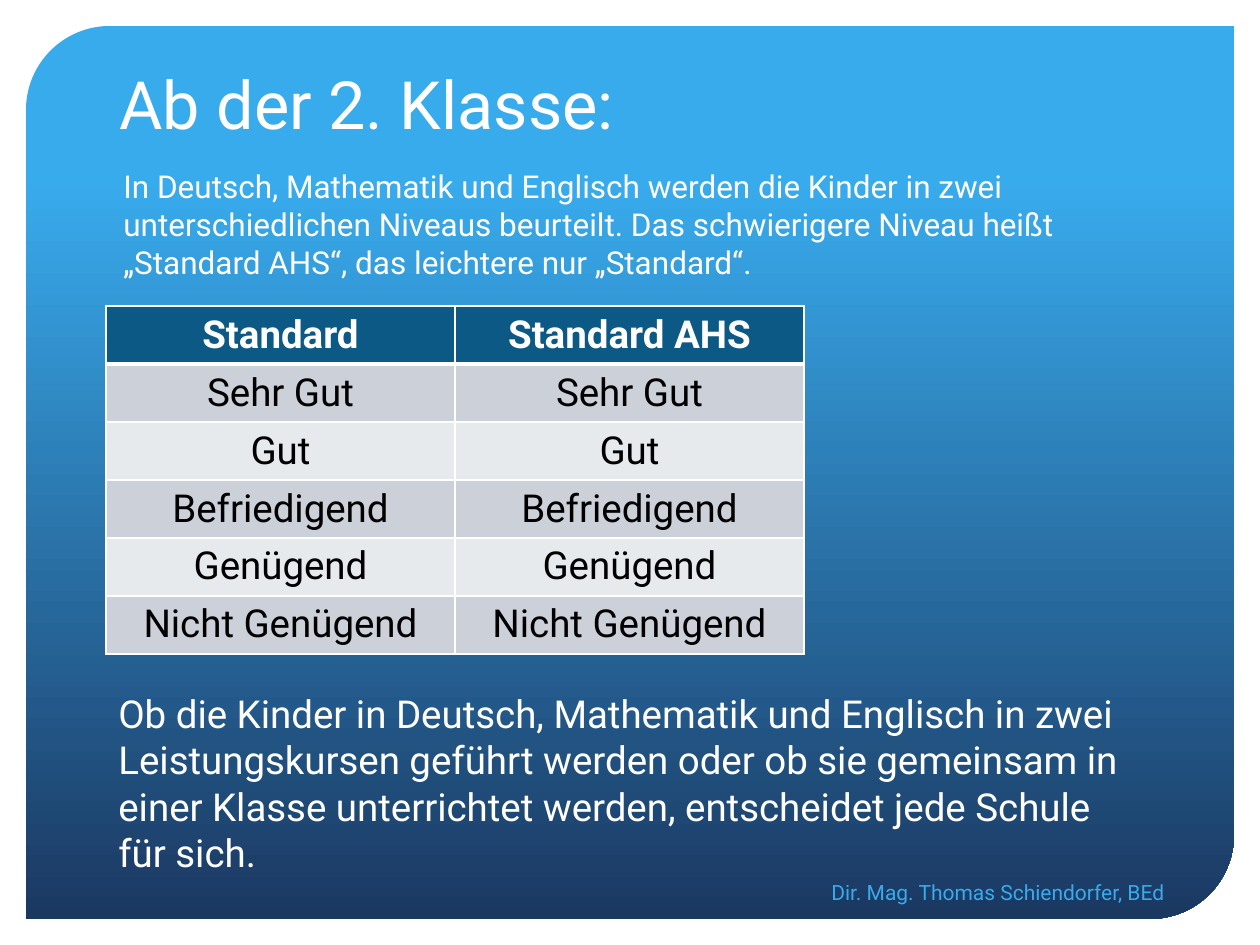
from dataclasses import dataclass

import pptx
import pptx.dml.color
import pptx.enum.shapes
import pptx.enum.text
import pptx.oxml
import pptx.oxml.ns
import pptx.util
from lxml import etree

RGBColor = pptx.dml.color.RGBColor
Anchor = pptx.enum.text.MSO_ANCHOR
Align = pptx.enum.text.PP_ALIGN

PIXELS_PER_INCH = 126
FONT = "Roboto"
WHITE = RGBColor(0xFF, 0xFF, 0xFF)
BLACK = RGBColor(0, 0, 0)
SKY = RGBColor(0x38, 0xAB, 0xED)
NAVY = RGBColor(0x1B, 0x38, 0x61)
HEADER_FILL = RGBColor(0x0C, 0x59, 0x86)
BAND_FILLS = (RGBColor(0xCC, 0xD1, 0xD9), RGBColor(0xE7, 0xEA, 0xED))

COURSES = ("Standard", "Standard AHS")
GRADES = ("Sehr Gut", "Gut", "Befriedigend", "Genügend", "Nicht Genügend")
COLUMN_WIDTH = 349
ROW_HEIGHT = 58


@dataclass(frozen=True)
class TextBlock:
    left: int
    top: int
    width: int
    height: int
    text: str
    size: int
    color: RGBColor = WHITE
    anchor: Anchor = Anchor.TOP
    align: Align = Align.LEFT


TEXT_BLOCKS = (
    TextBlock(107, 53, 1045, 96, "Ab der 2. Klasse:", 38, anchor=Anchor.BOTTOM),
    TextBlock(455, 867, 722, 50, "Dir. Mag. Thomas Schiendorfer, BEd", 12,
              SKY, Anchor.MIDDLE, Align.RIGHT),
    TextBlock(106, 684, 1045, 199,
              "Ob die Kinder in Deutsch, Mathematik und Englisch in zwei "
              "Leistungskursen geführt werden oder ob sie gemeinsam in einer "
              "Klasse unterrichtet werden, entscheidet jede Schule für sich.", 22),
    TextBlock(111, 161, 1045, 127,
              "In Deutsch, Mathematik und Englisch werden die Kinder in zwei "
              "unterschiedlichen Niveaus beurteilt. Das schwierigere Niveau heißt "
              "„Standard AHS“, das leichtere nur „Standard“.", 18),
)


def px(length: int) -> pptx.util.Emu:
    return pptx.util.Emu(round(length * 914400 / PIXELS_PER_INCH))


def write_text(frame, text: str, size: int, color: RGBColor, align: Align,
               bold: bool = False) -> None:
    paragraph = frame.paragraphs[0]
    paragraph.alignment = align
    run = paragraph.add_run()
    run.text = text
    run.font.name = FONT
    run.font.size = pptx.util.Pt(size)
    run.font.bold = bold
    run.font.color.rgb = color


def draw_panel(slide) -> None:
    panel = slide.shapes.add_shape(
        pptx.enum.shapes.MSO_SHAPE.ROUND_2_DIAG_RECTANGLE,
        px(26), px(26), px(1208), px(893))
    panel.adjustments[0] = 0.094
    panel.adjustments[1] = 0
    panel.shadow.inherit = False
    panel.line.fill.background()
    panel.fill.gradient()
    panel.fill.gradient_angle = 270
    for stop, position, color in zip(panel.fill.gradient_stops, (0.17, 1), (SKY, NAVY)):
        stop.position = position
        stop.color.rgb = color


def draw_text(slide, block: TextBlock) -> None:
    shape = slide.shapes.add_textbox(
        px(block.left), px(block.top), px(block.width), px(block.height))
    frame = shape.text_frame
    frame.word_wrap = True
    frame.vertical_anchor = block.anchor
    write_text(frame, block.text, block.size, block.color, block.align)


def set_borders(cell, top: int, bottom: int) -> None:
    properties = cell._tc.get_or_add_tcPr()
    widths = {"lnL": 1, "lnR": 1, "lnT": top, "lnB": bottom}
    for index, (tag, width) in enumerate(widths.items()):
        line = etree.Element(pptx.oxml.ns.qn(f"a:{tag}"), w=str(pptx.util.Pt(width)))
        fill = etree.SubElement(line, pptx.oxml.ns.qn("a:solidFill"))
        etree.SubElement(fill, pptx.oxml.ns.qn("a:srgbClr"), val=str(WHITE))
        properties.insert(index, line)


def draw_grades(slide) -> None:
    rows = [COURSES] + [(grade,) * len(COURSES) for grade in GRADES]
    table = slide.shapes.add_table(
        len(rows), len(COURSES), px(106), px(306),
        px(COLUMN_WIDTH * len(COURSES)), px(ROW_HEIGHT * len(rows))).table
    for row_index, row in enumerate(rows):
        header = row_index == 0
        for column_index, text in enumerate(row):
            cell = table.cell(row_index, column_index)
            cell.fill.solid()
            cell.fill.fore_color.rgb = (
                HEADER_FILL if header else BAND_FILLS[(row_index - 1) % 2])
            write_text(cell.text_frame, text, 22, WHITE if header else BLACK,
                       Align.CENTER, header)
            set_borders(cell, 3 if row_index == 1 else 1, 3 if header else 1)


def main() -> None:
    presentation = pptx.Presentation()
    presentation.slide_width = px(1260)
    presentation.slide_height = px(945)
    slide = presentation.slides.add_slide(presentation.slide_layouts[6])
    draw_panel(slide)
    draw_grades(slide)
    for block in TEXT_BLOCKS:
        draw_text(slide, block)
    presentation.save("out.pptx")


if __name__ == "__main__":
    main()
